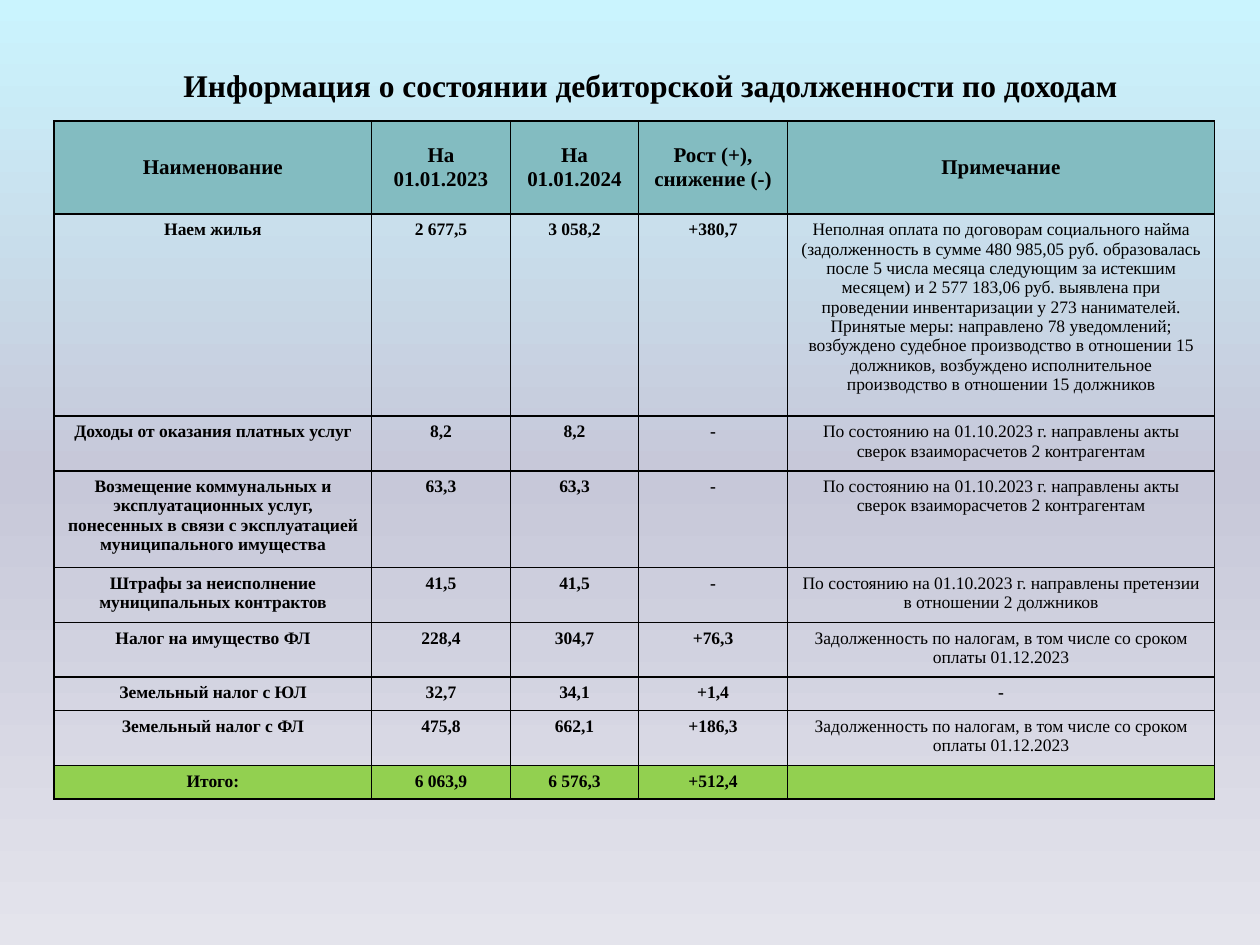
from copy import deepcopy
from typing import NamedTuple

from lxml import etree
from pptx import Presentation
from pptx import util as u
from pptx.dml import color
from pptx.enum import text
from pptx.oxml import ns

HUES = {"ink": "000000", "head": "83BCC1", "total": "92D050",
        "top": "CAF4FE", "mid": "C7C8D9", "low": "E4E4EC"}
FACE = "Times New Roman"
WIDE, HIGH = u.Inches(10), u.Inches(7.5)
COLS = (0.252, 0.11, 0.102, 0.118, 0.339)


class Row(NamedTuple):
    cells: tuple[str, ...]
    high: float
    fill: str = ""
    size: int = 10
    head: bool = False


ACTS = "По состоянию на 01.10.2023 г. направлены акты сверок взаиморасчетов 2 контрагентам"
TAXES = "Задолженность по налогам, в том числе со сроком оплаты 01.12.2023"
RENT = ("Неполная оплата по договорам социального найма (задолженность в сумме "
        "480 985,05 руб. образовалась после 5 числа месяца следующим за истекшим "
        "месяцем) и 2 577 183,06 руб. выявлена при проведении инвентаризации у 273 "
        "нанимателей. Принятые меры: направлено 78 уведомлений; возбуждено судебное "
        "производство в отношении 15 должников, возбуждено исполнительное "
        "производство в отношении 15 должников")
ROWS = (
    Row(("Наименование", "На 01.01.2023", "На 01.01.2024",
         "Рост (+), снижение (-)", "Примечание"), 0.74, "head", 12, True),
    Row(("Наем жилья", "2 677,5", "3 058,2", "+380,7", RENT), 1.48),
    Row(("Доходы от оказания платных услуг", "8,2", "8,2", "-", ACTS), 0.4),
    Row(("Возмещение коммунальных и эксплуатационных услуг, понесенных в связи "
         "с эксплуатацией муниципального имущества", "63,3", "63,3", "-", ACTS), 0.71),
    Row(("Штрафы за неисполнение муниципальных контрактов", "41,5", "41,5", "-",
         "По состоянию на 01.10.2023 г. направлены претензии в отношении "
         "2 должников"), 0.43),
    Row(("Налог на имущество ФЛ", "228,4", "304,7", "+76,3", TAXES), 0.4),
    Row(("Земельный налог с ЮЛ", "32,7", "34,1", "+1,4", "-"), 0.26),
    Row(("Земельный налог с ФЛ", "475,8", "662,1", "+186,3", TAXES), 0.4),
    Row(("Итого:", "6 063,9", "6 576,3", "+512,4", ""), 0.26, "total"),
)


def tint(name: str) -> color.RGBColor:
    return color.RGBColor.from_string(HUES[name])


def write(frame, words: str, size: float = 10, bold: bool = True, hue: str = "ink") -> None:
    line = frame.paragraphs[0]
    line.alignment = text.PP_ALIGN.CENTER
    if not words:
        line._p.get_or_add_endParaRPr().set("sz", str(int(size * 100)))
        return
    run = line.add_run()
    run.text = words
    run.font.name, run.font.size, run.font.bold = FACE, u.Pt(size), bold
    run.font.color.rgb = tint(hue)


def paint(slide) -> None:
    fill = slide.background.fill
    fill.gradient()
    fill.gradient_angle = 270
    stops = next(slide._element.iter(ns.qn("a:gsLst")))
    stops.append(deepcopy(stops[-1]))
    for stop, spot, name in zip(fill.gradient_stops, (0, 0.5, 1), ("top", "mid", "low")):
        stop.position = spot
        stop.color.rgb = tint(name)


def edge(cell) -> None:
    props = cell._tc.get_or_add_tcPr()
    for side in "LRTB":
        line = etree.SubElement(props, ns.qn(f"a:ln{side}"), w=str(u.Pt(1)))
        solid = etree.SubElement(line, ns.qn("a:solidFill"))
        etree.SubElement(solid, ns.qn("a:srgbClr"), val=HUES["ink"])


def title(slide, words: str) -> None:
    box = slide.shapes.add_textbox(int(WIDE * 0.083), int(HIGH * 0.048),
                                   int(WIDE * 0.867), int(HIGH * 0.084))
    box.text_frame.word_wrap = True
    box.text_frame.vertical_anchor = text.MSO_ANCHOR.MIDDLE
    write(box.text_frame, words, size=18)


def grid(slide, rows: tuple[Row, ...]) -> None:
    table = slide.shapes.add_table(
        len(rows), len(COLS), int(WIDE * 0.043), int(HIGH * 0.128),
        int(WIDE * sum(COLS)), u.Inches(sum(row.high for row in rows))).table
    table.first_row = table.horz_banding = False
    for col, share in zip(table.columns, COLS):
        col.width = int(WIDE * share)
    for line, row in zip(table.rows, rows):
        line.height = u.Inches(row.high)
        for spot, (cell, words) in enumerate(zip(line.cells, row.cells)):
            edge(cell)
            if row.fill:
                cell.fill.solid()
                cell.fill.fore_color.rgb = tint(row.fill)
            else:
                cell.fill.background()
            if row.head:
                cell.vertical_anchor = text.MSO_ANCHOR.MIDDLE
            note = spot == len(COLS) - 1 and not row.head and words != "-"
            write(cell.text_frame, words, size=row.size, bold=not note)


def main() -> None:
    deck = Presentation()
    deck.slide_width, deck.slide_height = WIDE, HIGH
    slide = deck.slides.add_slide(deck.slide_layouts[6])
    paint(slide)
    title(slide, "Информация о состоянии дебиторской задолженности по доходам")
    grid(slide, ROWS)
    deck.save("out.pptx")


if __name__ == "__main__":
    main()
